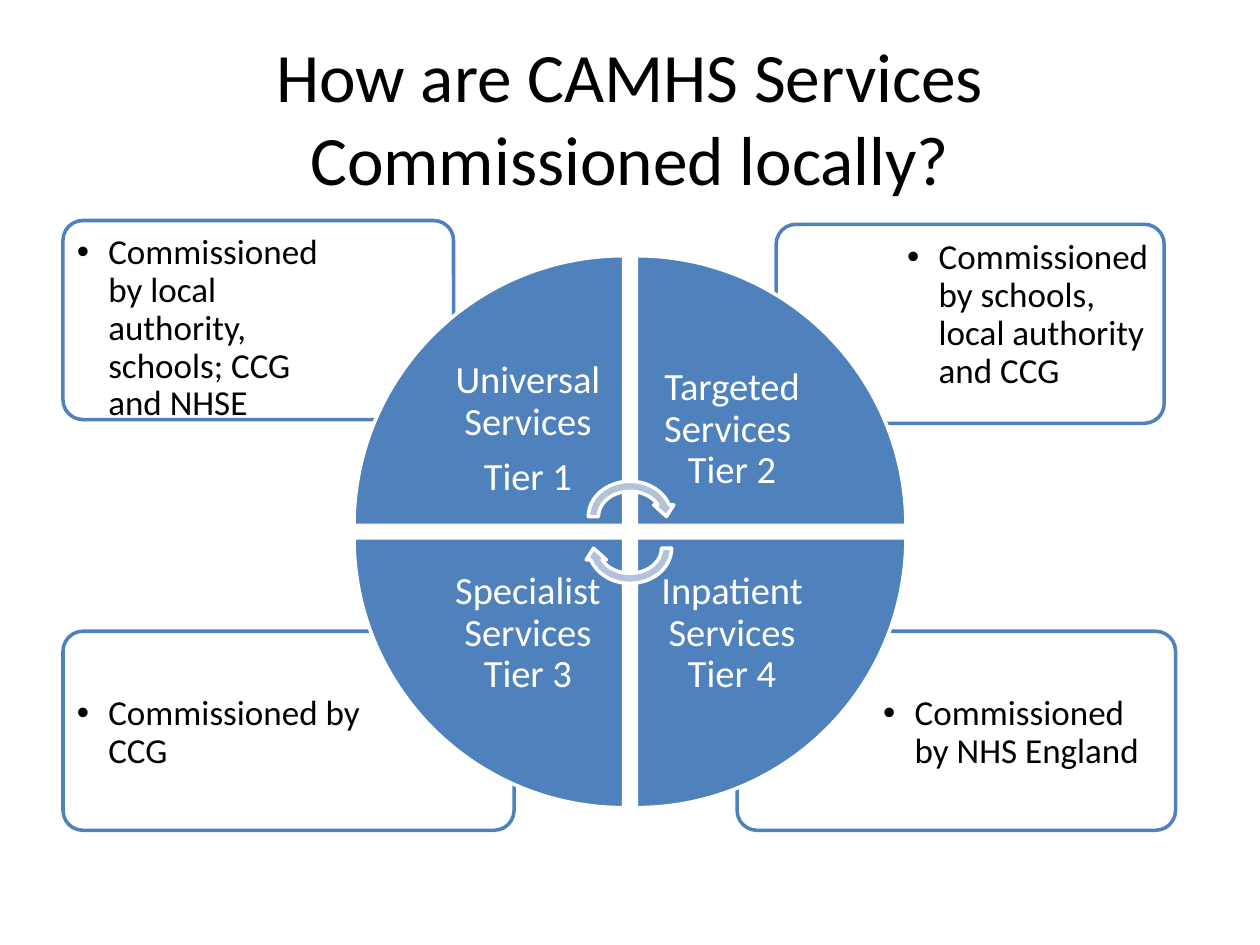
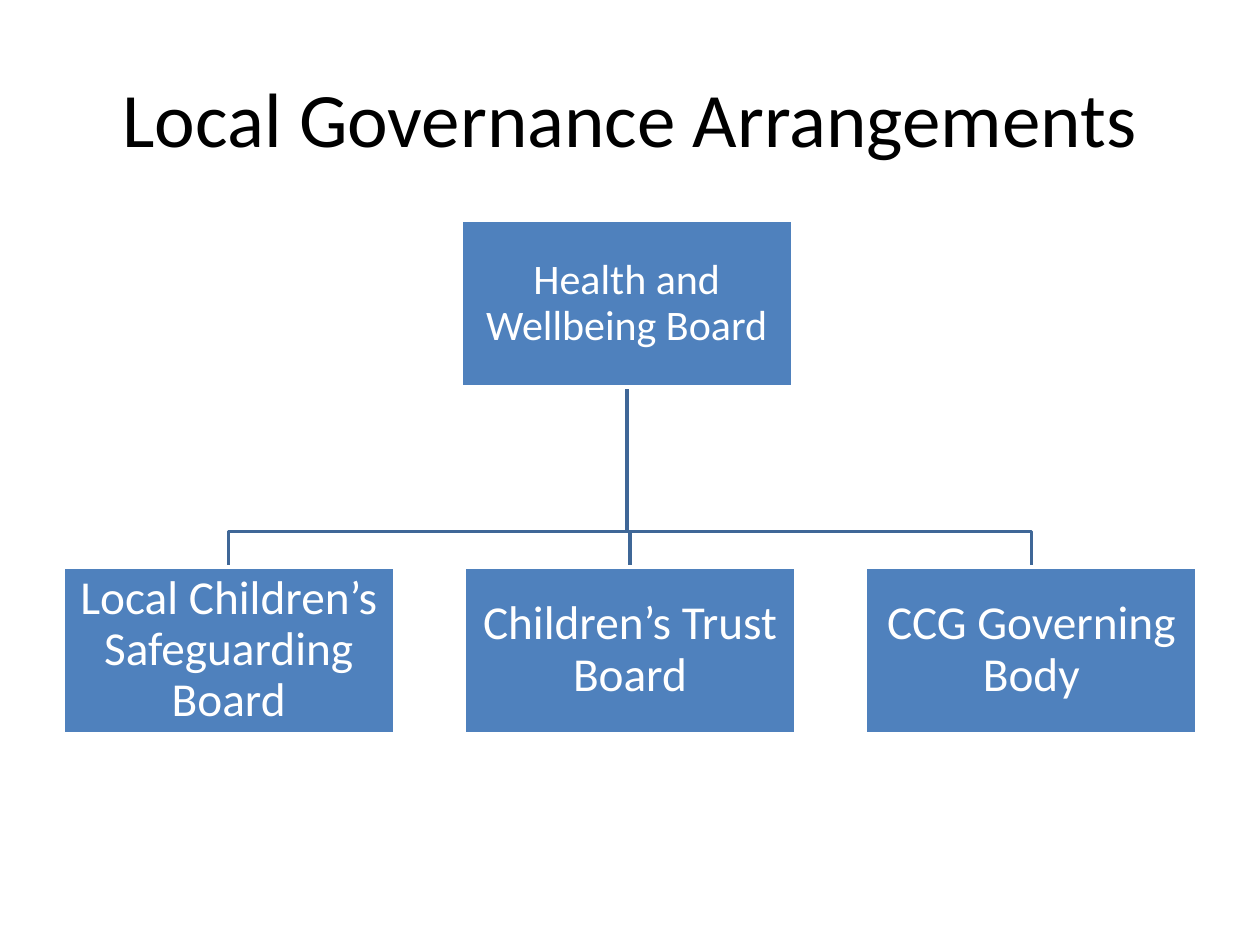
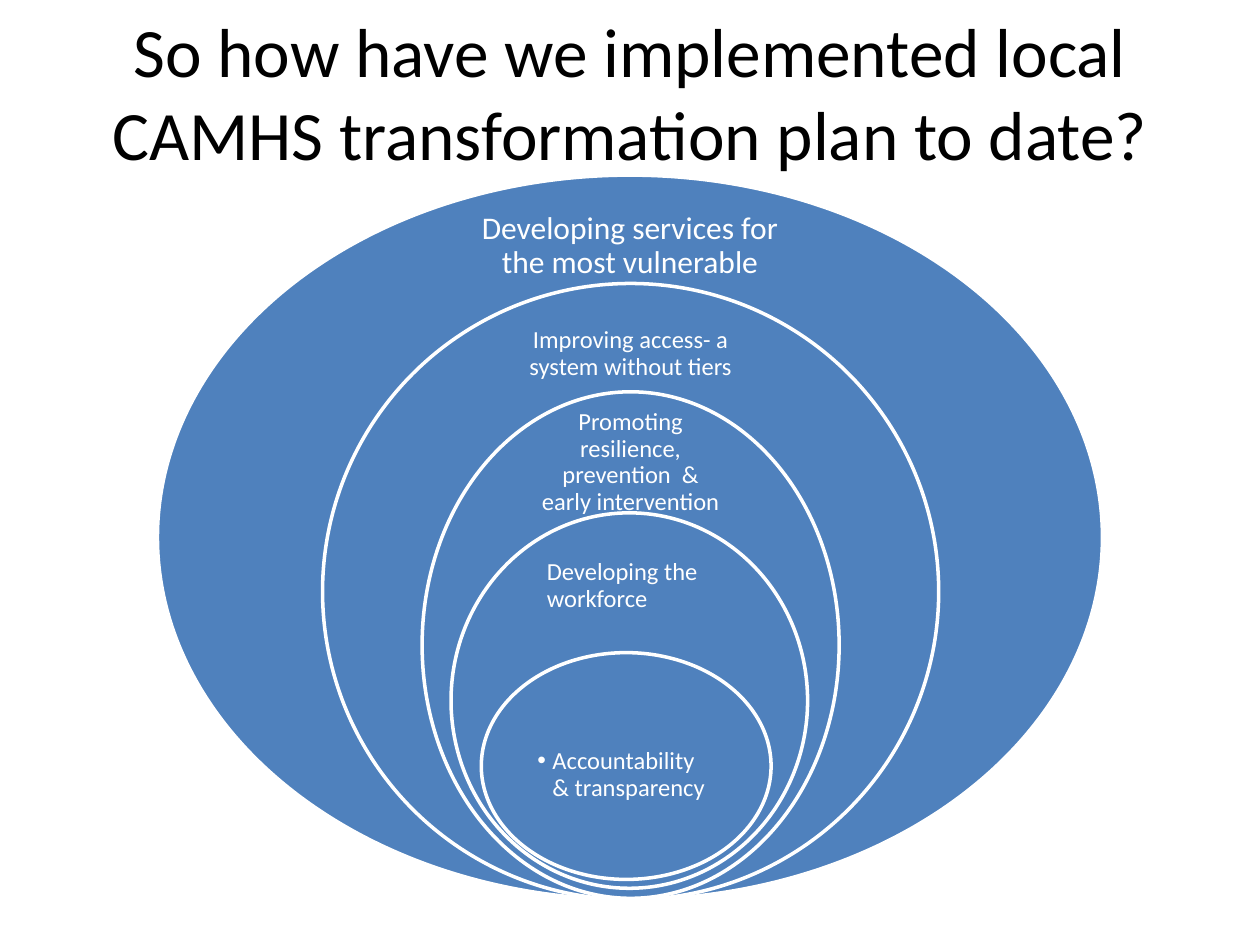
import pptx
import pptx.dml.color
import pptx.enum.shapes
import pptx.enum.text
import pptx.oxml.ns
import pptx.util
from lxml import etree

Inches = pptx.util.Inches
SHAPES = pptx.enum.shapes.MSO_SHAPE
ALIGN = pptx.enum.text.PP_ALIGN
ANCHOR = pptx.enum.text.MSO_ANCHOR

FONT = "Calibri"
LINE_WIDTH = 2
COLOURS = {
    "ink": "000000",
    "paper": "FFFFFF",
    "blue": "4F81BD",
    "branch": "3F6797",
    "arrow": "B3C1DB",
}


def colour(name):
    return pptx.dml.color.RGBColor.from_string(COLOURS[name])


def set_line(shape, name):
    shape.line.color.rgb = colour(name)
    shape.line.width = pptx.util.Pt(LINE_WIDTH)


def add_figure(page, kind, box, fill="blue", line="paper", rotation=0):
    shape = page.shapes.add_shape(kind, *map(Inches, box))
    shape.shadow.inherit = False
    shape.fill.solid()
    shape.fill.fore_color.rgb = colour(fill)
    set_line(shape, line)
    shape.rotation = rotation
    return shape


def add_bullet(para, indent):
    properties = para._p.get_or_add_pPr()
    properties.set("marL", str(Inches(indent)))
    properties.set("indent", str(-Inches(indent)))
    for tag, key, value in (("a:buFont", "typeface", "Arial"), ("a:buChar", "char", "•")):
        etree.SubElement(properties, pptx.oxml.ns.qn(tag)).set(key, value)


def write_text(shape, lines, size, name="paper", inset=0.02, align=ALIGN.CENTER,
               anchor=ANCHOR.MIDDLE, spacing=0.9, after=0.35, bullet=0):
    frame = shape.text_frame
    frame.word_wrap = True
    frame.vertical_anchor = anchor
    frame.margin_left = frame.margin_right = Inches(inset)
    frame.margin_top = frame.margin_bottom = Inches(inset)
    for index, line in enumerate(lines):
        para = frame.add_paragraph() if index else frame.paragraphs[0]
        para.alignment = align
        para.line_spacing = spacing
        para.space_after = pptx.util.Pt(size * after)
        if bullet:
            add_bullet(para, bullet)
        span = para.add_run()
        span.text = line
        span.font.name = FONT
        span.font.size = pptx.util.Pt(size)
        span.font.color.rgb = colour(name)


def add_label(page, box, lines, size, **style):
    write_text(page.shapes.add_textbox(*map(Inches, box)), lines, size, **style)


def add_page(deck, title, size=39.6, height=1.25):
    page = deck.slides.add_slide(deck.slide_layouts[6])
    add_label(page, (0.5, 0.3, 9, height), [title], size,
              name="ink", inset=0.05, spacing=1.0, after=0)
    return page


def add_commissioner_card(page, box, text, text_left, text_width, text_top):
    left, top, width, height = box
    card = add_figure(page, SHAPES.ROUNDED_RECTANGLE, box, "paper", "blue")
    card.adjustments[0] = 0.1
    add_label(page, (left + text_left, top + text_top, text_width, 1.12), [text], 20,
              name="ink", inset=0.08, align=ALIGN.LEFT, anchor=ANCHOR.TOP,
              after=0.15, bullet=0.25)


def add_tier_wheel(page, left, top, tiers):
    wedge, step, label = 2.14, 2.24, 1.52
    for column, row, rotation, lines in tiers:
        x, y = left + column * step, top + row * step
        add_figure(page, SHAPES.PIE_WEDGE, (x, y, wedge, wedge), rotation=rotation)
        inward = wedge - label
        label_box = (x + (1 - column) * inward, y + (1 - row) * inward, label, label)
        add_label(page, label_box, lines, 22, inset=0.17)
    width, height = 0.74, 0.64
    centre = (wedge + step) / 2
    for offset, rotation in ((-0.44, 0), (-0.19, 180)):
        box = (left + centre - width / 2, top + centre + offset, width, height)
        add_figure(page, SHAPES.CIRCULAR_ARROW, box, "arrow", rotation=rotation)


def build_commissioning(deck):
    page = add_page(deck, "How are CAMHS Services Commissioned locally?")
    cards = [
        ((5.85, 5.01, 3.48, 1.58), "Commissioned by NHS England", 1.08, 2.36, 0.43),
        ((0.5, 5.01, 3.58, 1.58), "Commissioned by CCG", 0.03, 2.44, 0.43),
        ((6.16, 1.78, 3.08, 1.58), "Commissioned by schools, local authority and CCG",
         0.96, 2.08, 0.04),
        ((0.5, 1.75, 3.1, 1.58), "Commissioned by local authority, schools; CCG and NHSE",
         0.03, 2.1, 0.03),
    ]
    for card in cards:
        add_commissioner_card(page, *card)
    add_tier_wheel(page, 2.81, 2.03, [
        (0, 0, 0, ["Universal Services", "Tier 1"]),
        (1, 0, 90, ["Targeted Services  Tier 2"]),
        (1, 1, 180, ["Inpatient Services Tier 4"]),
        (0, 1, 270, ["Specialist Services Tier 3"]),
    ])


def add_branch(page, points):
    (start, *rest) = [(Inches(x), Inches(y)) for x, y in points]
    builder = page.shapes.build_freeform(*start)
    builder.add_line_segments(rest, close=False)
    branch = builder.convert_to_shape()
    branch.shadow.inherit = False
    branch.fill.background()
    set_line(branch, "branch")


def add_board_tree(page, left, top, parent, children):
    width, height, step = 2.63, 1.32, 3.185
    parent_left, child_top, bend = left + 3.16, top + 2.75, top + 2.47
    trunk = parent_left + width / 2
    child_lefts = [left + index * step for index in range(len(children))]
    for child_left in reversed(child_lefts):
        middle = child_left + width / 2
        add_branch(page, [(trunk, top + height), (trunk, bend),
                          (middle, bend), (middle, child_top)])
    boards = [(parent_left, top, parent, 24)]
    boards += [(x, child_top, name, 27) for x, name in zip(child_lefts, children)]
    for x, y, name, size in boards:
        board = add_figure(page, SHAPES.RECTANGLE, (x, y, width, height))
        write_text(board, [name], size)


def build_governance(deck):
    page = add_page(deck, "Local Governance Arrangements", size=44)
    add_board_tree(page, 0.5, 1.75, "Health and Wellbeing Board", [
        "Local Children’s Safeguarding Board",
        "Children’s Trust Board",
        "CCG Governing Body",
    ])


def add_ring(page, box, text, label_drop, label_width, label_height, size=14, **style):
    left, top, width, height = box
    add_figure(page, SHAPES.OVAL, box)
    label_left = left + (width - label_width) / 2
    add_label(page, (label_left, top + label_drop, label_width, label_height),
              [text], size, **{"inset": 0.11, **style})


def build_transformation(deck):
    page = add_page(deck, "So how have we implemented local CAMHS transformation plan to date?",
                    height=0.85)
    add_ring(page, (1.25, 1.39, 7.5, 5.75), "Developing services for the most vulnerable",
             0.28, 2.81, 0.57, size=18, inset=0.14)
    add_ring(page, (2.56, 2.25, 4.89, 4.89), "Improving access- a system without tiers",
             0.28, 2.11, 0.56)
    add_ring(page, (3.35, 3.11, 3.31, 4.02),
             "Promoting resilience, prevention  & early intervention", 0.28, 1.71, 0.56)
    plain = {"align": ALIGN.LEFT, "anchor": ANCHOR.TOP}
    add_ring(page, (3.58, 4.07, 2.83, 2.98), "Developing the workforce",
             0.26, 1.53, 0.54, **plain)
    add_ring(page, (3.82, 5.18, 2.3, 1.8), "Accountability & transparency",
             0.65, 1.63, 0.7, after=0.15, bullet=0.12, **plain)


def main():
    deck = pptx.Presentation()
    deck.slide_width, deck.slide_height = Inches(10), Inches(7.5)
    build_commissioning(deck)
    build_governance(deck)
    build_transformation(deck)
    deck.save("out.pptx")


if __name__ == "__main__":
    main()
